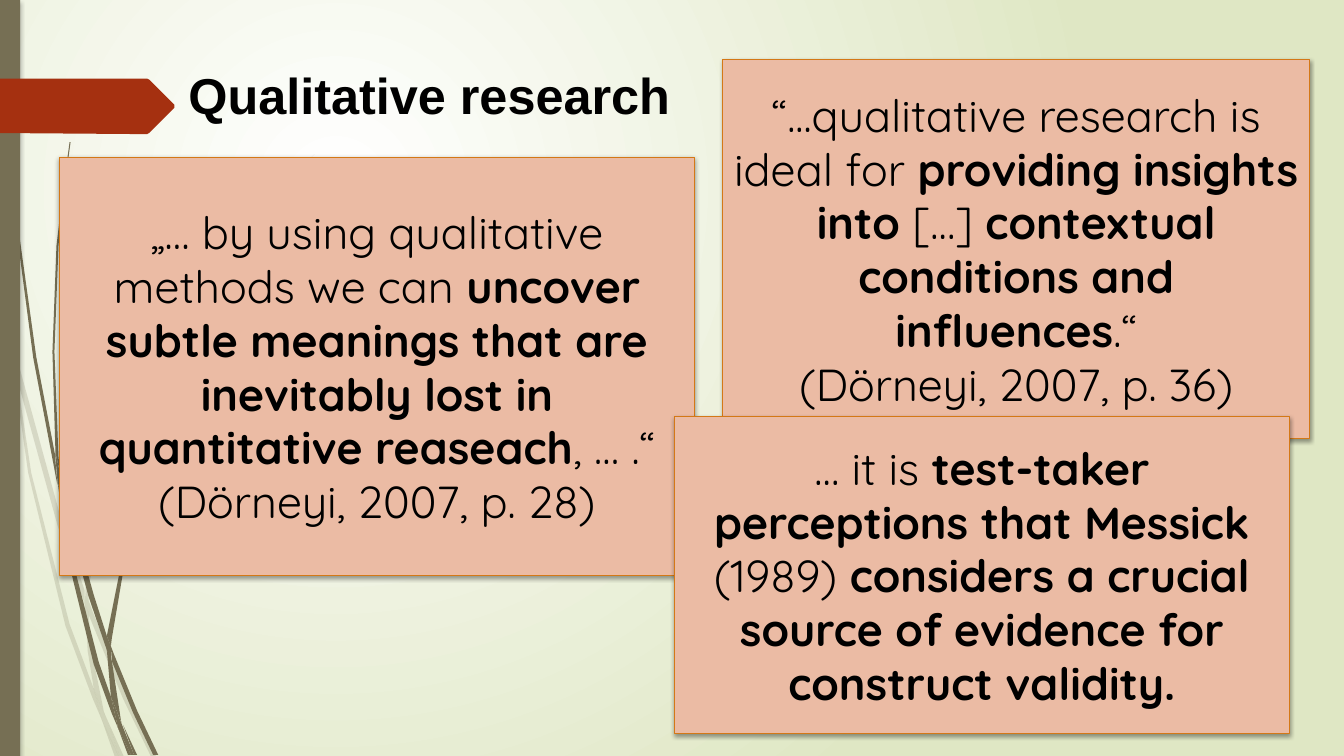
from lxml import etree
from pptx import Presentation
from pptx import util as u
from pptx.dml.color import RGBColor
from pptx.enum import shapes, text
from pptx.oxml import ns

COLUMNS, ROWS = 1333, 750
CELL = u.Inches(0.01)
OLIVE, RUST, PEACH, ORANGE, BLACK = "766F54", "A53010", "EBBBA4", "D47816", "000000"

FAINT_BLADES = [
    [(11, 350), (8, 322), (0, 282), (0, 299), (10, 344)],
    [(57, 521), (84, 599), (84, 586), (62, 520), (14, 345), (17, 376)],
    [(92, 607), (88, 596), (88, 610), (122, 693), (150, 751), (155, 751), (127, 691)],
    [(119, 751), (123, 751), (105, 711)],
    [(93, 683), (69, 619), (31, 469), (17, 376), (11, 350), (28, 469), (65, 621), (92, 693),
     (101, 714), (99, 707)],
    [(84, 599), (87, 646), (93, 683), (96, 692), (105, 711), (103, 706), (91, 646), (88, 610),
     (88, 608)],
    [(88, 583), (110, 462), (160, 349), (228, 245), (268, 198), (289, 175), (312, 153),
     (289, 175), (268, 197), (227, 244), (158, 348), (107, 461), (85, 583), (85, 586), (88, 595)],
    [(101, 714), (114, 751), (118, 751)],
    [(88, 608), (88, 610), (88, 596), (85, 586), (84, 599)],
    [(96, 692), (93, 683), (99, 707), (101, 714), (118, 751), (119, 751), (105, 711)],
]
DARK_BLADES = [
    [(7, 110), (17, 233), (33, 355), (56, 476), (57, 481), (55, 457), (55, 453), (36, 354),
     (19, 232), (8, 109), (5, 48), (4, 0), (3, 0), (4, 48)],
    [(88, 592), (106, 645), (106, 633), (106, 631), (93, 590), (60, 472), (64, 505)],
    [(113, 649), (110, 641), (111, 656), (132, 707), (152, 749), (157, 749), (136, 705)],
    [(110, 691), (98, 657), (72, 556), (64, 505), (57, 477), (68, 557), (93, 659), (111, 708),
     (117, 722), (116, 717)],
    [(60, 472), (58, 453), (54, 349), (58, 244), (63, 193), (70, 141), (69, 141), (62, 193),
     (56, 244), (52, 349), (55, 449), (60, 471)],
    [(133, 749), (136, 749), (122, 719)],
    [(57, 477), (64, 505), (60, 472), (55, 449), (55, 453)],
    [(111, 633), (125, 551), (158, 476), (204, 406), (231, 374), (245, 359), (260, 344),
     (245, 358), (231, 373), (203, 405), (156, 474), (122, 551), (106, 631), (110, 641)],
    [(117, 722), (127, 749), (130, 749)],
    [(106, 645), (110, 691), (116, 706), (121, 718), (120, 715), (111, 656), (109, 651)],
    [(106, 645), (108, 650), (110, 656), (110, 641), (106, 631), (106, 633)],
    [(116, 706), (110, 691), (116, 717), (117, 722), (130, 749), (133, 749), (121, 719)],
]
TAG = [(173, 48), (148, 73), (146, 74), (136, 74), (0, 73), (0, 19), (136, 19), (146, 19),
       (148, 20), (173, 45)]


def color(code):
    """Turn a hex string into a colour."""
    return RGBColor.from_string(code)


def cells(*counts):
    """Turn grid cells into lengths."""
    return [u.Emu(round(count * CELL)) for count in counts]


def child(parent, tag, **values):
    """Append a drawing element to a parent."""
    node = etree.SubElement(parent, ns.qn(tag))
    for name, value in values.items():
        node.set(name, str(value))
    return node


def paint(shape, fill, line=None, alpha=None):
    """Give a shape its fill, outline and opacity."""
    shape.shadow.inherit = False
    shape.fill.solid()
    shape.fill.fore_color.rgb = color(fill)
    if alpha:
        tone = shape.element.spPr.find(".//" + ns.qn("a:srgbClr"))
        child(tone, "a:alpha", val=alpha * 1000)
    if line:
        shape.line.color.rgb = color(line)
        shape.line.width = u.Pt(0.75)
    else:
        shape.line.fill.background()


def cast_shadow(shape, alpha, blur, distance):
    """Drop a black shadow straight down."""
    effects = shape.element.spPr.find(ns.qn("a:effectLst"))
    shadow = child(effects, "a:outerShdw", blurRad=u.Pt(blur), dist=u.Pt(distance),
                   dir=5400000, algn="ctr", rotWithShape=0)
    child(child(shadow, "a:srgbClr", val=BLACK), "a:alpha", val=alpha * 1000)


def write(shape, paragraphs, size, font, align=text.PP_ALIGN.LEFT, anchor=text.MSO_ANCHOR.TOP):
    """Fill a shape with paragraphs of (words, bold) spans."""
    frame = shape.text_frame
    frame.word_wrap = True
    frame.vertical_anchor = anchor
    for index, spans in enumerate(paragraphs):
        para = frame.add_paragraph() if index else frame.paragraphs[0]
        para.alignment = align
        for words, bold in spans:
            span = para.add_run()
            span.text = words
            span.font.size, span.font.name, span.font.bold = u.Pt(size), font, bold
            span.font.color.rgb = color(BLACK)


def draw_outline(page, corner, points, fill, alpha=None):
    """Draw a closed outline whose points count from a corner."""
    left, top = corner
    outline = [cells(left + x, top + y) for x, y in points]
    builder = page.shapes.build_freeform(*outline[0], scale=1.0)
    builder.add_line_segments(outline[1:], close=True)
    paint(builder.convert_to_shape(), fill, alpha=alpha)


def draw_backdrop(page, box):
    """Paint the glow, the grass blades and the side bar."""
    left, top, _, height = box
    fill = page.background.fill
    fill.gradient()
    for stop, tone in zip(fill.gradient_stops, ("FFFFFF", "DFE7C4")):
        stop.color.rgb = color(tone)
    gradient = page.element.find(".//" + ns.qn("a:gradFill"))
    gradient.remove(gradient.find(ns.qn("a:lin")))
    glow = child(gradient, "a:path", path="circle")
    child(glow, "a:fillToRect", l=25000, t=25000, r=75000, b=75000)
    for blades, alpha in ((FAINT_BLADES, 20), (DARK_BLADES, None)):
        for points in blades:
            draw_outline(page, (left, top), points, OLIVE, alpha)
    bar = page.shapes.add_shape(shapes.MSO_SHAPE.RECTANGLE, *cells(left, top, 20, height))
    paint(bar, OLIVE)
    cast_shadow(bar, 25, 3, 2)


def draw_heading(page, box, words):
    """Place the arrow tag and the title beside it."""
    left, top, width, height = box
    draw_outline(page, (left, top), TAG, RUST)
    title = page.shapes.add_textbox(*cells(left + 177, top, width - 177, height))
    write(title, [[(words, True)]], 36, "Arial")


def draw_quote(page, box, paragraphs):
    """Place one quotation card."""
    card = page.shapes.add_shape(shapes.MSO_SHAPE.RECTANGLE, *cells(*box))
    paint(card, PEACH, ORANGE)
    cast_shadow(card, 38, 3.1, 1.6)
    write(card, paragraphs, 32, "Quicksand", text.PP_ALIGN.CENTER, text.MSO_ANCHOR.MIDDLE)


QUOTES = [
    ((717, 59, 582, 376), [
        [("“...qualitative research is ideal for ", False), ("providing insights into ", True),
         ("[…] ", False), ("contextual conditions and influences", True), (".“", False)],
        [("(Dörneyi, 2007, p. 36)", False)]]),
    ((59, 156, 630, 415), [
        [("„… by using qualitative methods we can ", False),
         ("uncover subtle meanings that are inevitably lost in quantitative reaseach", True),
         (", … .“", False)],
        [("(Dörneyi, 2007, p. 28)", False)]]),
    ((669, 413, 610, 315), [
        [("… it is ", False), ("test-taker perceptions that Messick", True), (" (1989)", False),
         (" considers a crucial source of evidence for construct validity.", True)]]),
]


def main():
    """Build the slide and save the deck."""
    deck = Presentation()
    deck.slide_width, deck.slide_height = cells(COLUMNS, ROWS)
    page = deck.slides.add_slide(deck.slide_layouts[6])
    draw_backdrop(page, (0, 0, COLUMNS, ROWS))
    draw_heading(page, (0, 59, 689, 135), "Qualitative research")
    for box, paragraphs in QUOTES:
        draw_quote(page, box, paragraphs)
    deck.save("out.pptx")


if __name__ == "__main__":
    main()
